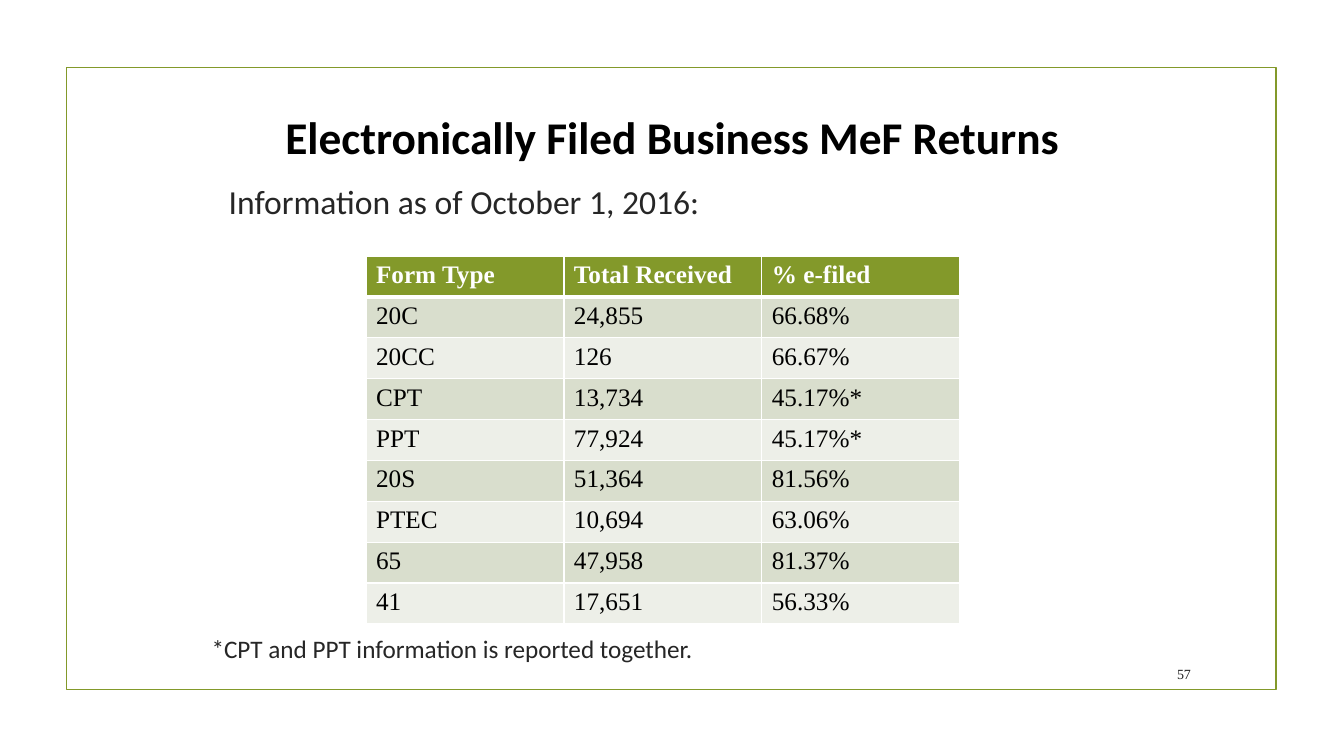
from lxml.etree import SubElement
from pptx import Presentation
from pptx.dml.color import RGBColor
from pptx.enum.shapes import MSO_SHAPE
from pptx.enum.text import MSO_ANCHOR, PP_ALIGN
from pptx.oxml.ns import qn
from pptx.util import Inches, Pt

COLORS = {
    "green": "83992A", "dark_band": "D9DECD", "light_band": "EDEFE8",
    "white": "FFFFFF", "black": "000000", "body": "262626", "number": "212121",
}
SANS, SERIF = "Calibri", "Times New Roman"
LEFT, CENTER, RIGHT = PP_ALIGN.LEFT, PP_ALIGN.CENTER, PP_ALIGN.RIGHT
TOP, MIDDLE = MSO_ANCHOR.TOP, MSO_ANCHOR.MIDDLE

FRAME = (0.66, 0.67, 12, 6.17)
TEXTS = [
    ("Electronically Filed Business MeF Returns", (2.17, 0.95, 9, 0.8), SANS, 32.4, "black", True, CENTER, MIDDLE),
    ("Information as of October 1, 2016:", (2.17, 1.75, 6.5, 0.6), SANS, 24, "body", False, LEFT, TOP),
    ("*CPT and PPT information is reported together.", (2, 6.23, 6.5, 0.6), SANS, 18, "body", False, LEFT, TOP),
    ("57", (11.32, 6.53, 0.59, 0.31), SERIF, 10, "number", False, RIGHT, MIDDLE),
]
TABLE = (3.63, 2.54, 5.89, 3.65)
ROWS = [
    ("Form Type", "Total Received", "% e-filed"),
    ("20C", "24,855", "66.68%"),
    ("20CC", "126", "66.67%"),
    ("CPT", "13,734", "45.17%*"),
    ("PPT", "77,924", "45.17%*"),
    ("20S", "51,364", "81.56%"),
    ("PTEC", "10,694", "63.06%"),
    ("65", "47,958", "81.37%"),
    ("41", "17,651", "56.33%"),
]


def color(name):
    return RGBColor.from_string(COLORS[name])


def inches(lengths):
    return [Inches(length) for length in lengths]


def style(para, font_name, size, color_name, bold):
    font = para.font
    font.name, font.size, font.bold = font_name, Pt(size), bold
    font.color.rgb = color(color_name)


def add_frame(page):
    frame = page.shapes.add_shape(MSO_SHAPE.RECTANGLE, *inches(FRAME))
    frame.shadow.inherit = False
    frame.fill.background()
    frame.line.color.rgb = color("green")
    frame.line.width = Pt(1.25)


def add_text(page, text, place, font_name, size, color_name, bold, align, anchor):
    text_frame = page.shapes.add_textbox(*inches(place)).text_frame
    text_frame.word_wrap = True
    text_frame.vertical_anchor = anchor
    text_frame.text = text
    para = text_frame.paragraphs[0]
    para.alignment = align
    style(para, font_name, size, color_name, bold)


def add_border(cell, side, width):
    properties = cell._tc.get_or_add_tcPr()
    line = SubElement(properties, qn(f"a:ln{side}"), w=str(Pt(width)))
    fill = SubElement(line, qn("a:solidFill"))
    SubElement(fill, qn("a:srgbClr"), val=COLORS["white"])


def add_returns_table(page):
    table = page.shapes.add_table(len(ROWS), len(ROWS[0]), *inches(TABLE)).table
    for row_index, row in enumerate(ROWS):
        header = row_index == 0
        band = "green" if header else "dark_band" if row_index % 2 else "light_band"
        for column_index, text in enumerate(row):
            cell = table.cell(row_index, column_index)
            cell.text = text
            style(cell.text_frame.paragraphs[0], SERIF, 18, "white" if header else "black", header)
            for side in "LRTB":
                thick = (row_index, side) in ((0, "B"), (1, "T"))
                add_border(cell, side, 3 if thick else 1)
            cell.fill.solid()
            cell.fill.fore_color.rgb = color(band)


def main():
    """Build the slide on electronically filed business returns."""
    deck = Presentation()
    deck.slide_width, deck.slide_height = Inches(13.33), Inches(7.5)
    page = deck.slides.add_slide(deck.slide_layouts[6])
    add_frame(page)
    for text in TEXTS:
        add_text(page, *text)
    add_returns_table(page)
    deck.save("out.pptx")


if __name__ == "__main__":
    main()
